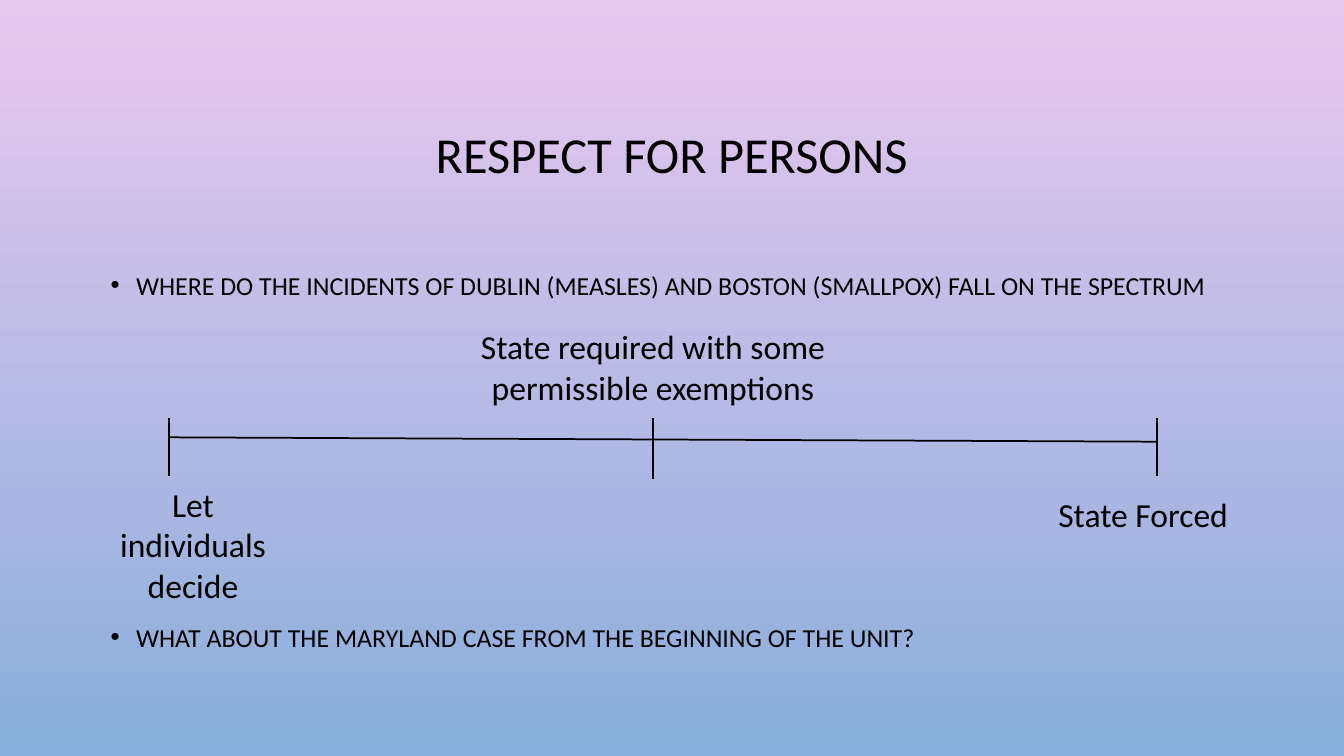
from dataclasses import dataclass

import pptx
import pptx.dml.color
import pptx.enum.shapes
import pptx.enum.text
import pptx.oxml
import pptx.oxml.ns
import pptx.util
from pptx.util import Cm

BLACK = pptx.dml.color.RGBColor(0x00, 0x00, 0x00)
PINK = pptx.dml.color.RGBColor(0xE9, 0xC8, 0xEF)
BLUE = pptx.dml.color.RGBColor(0x89, 0xAE, 0xDB)
FONT = "Calibri"
CENTER = pptx.enum.text.PP_ALIGN.CENTER
LEFT = pptx.enum.text.PP_ALIGN.LEFT
TOP = pptx.enum.text.MSO_ANCHOR.TOP
MIDDLE = pptx.enum.text.MSO_ANCHOR.MIDDLE


@dataclass
class TextBlock:
    """Text with its place in centimetres and its size in points."""
    lines: list[str]
    left: float
    top: float
    width: float
    height: float
    size: float = 24
    align: int = CENTER
    anchor: int = TOP
    line_spacing: float = 1.0


@dataclass
class Line:
    """A straight line between two points, in centimetres."""
    start_x: float
    start_y: float
    end_x: float
    end_y: float


TITLE = TextBlock(["RESPECT FOR PERSONS"], 2.54, 1.73, 28.78, 4.45,
                  size=36, anchor=MIDDLE, line_spacing=0.9)
QUESTIONS = TextBlock(
    ["WHERE DO THE INCIDENTS OF DUBLIN (MEASLES) AND BOSTON (SMALLPOX) FALL ON THE SPECTRUM",
     "WHAT ABOUT THE MARYLAND CASE FROM THE BEGINNING OF THE UNIT?"],
    2.54, 6.58, 28.78, 11.71, size=18.5, align=LEFT, line_spacing=1.1)
QUESTION_GAP = pptx.util.Pt(227)  # leaves room for the spectrum
LABELS = [
    TextBlock(["Let individuals decide"], 2.54, 12.07, 4.65, 3.33),
    TextBlock(["State required with some permissible exemptions"], 11.68, 8.1, 9.55, 2.31),
    TextBlock(["State Forced"], 26.42, 12.32, 5.46, 1.27, align=LEFT),
]

SPECTRUM_LEFT, SPECTRUM_MIDDLE, SPECTRUM_RIGHT = 4.26, 16.46, 29.15
TICK_TOP = 10.54
SPECTRUM = [
    Line(SPECTRUM_LEFT, 11.02, SPECTRUM_RIGHT, 11.13),
    Line(SPECTRUM_LEFT, TICK_TOP, SPECTRUM_LEFT, 11.99),
    Line(SPECTRUM_MIDDLE, TICK_TOP, SPECTRUM_MIDDLE, 12.06),
    Line(SPECTRUM_RIGHT, TICK_TOP, SPECTRUM_RIGHT, 11.99),
]


def add_text(page: pptx.slide.Slide, block: TextBlock) -> pptx.text.text.TextFrame:
    box = page.shapes.add_textbox(Cm(block.left), Cm(block.top),
                                  Cm(block.width), Cm(block.height))
    frame = box.text_frame
    frame.word_wrap = True
    frame.vertical_anchor = block.anchor
    frame.text = "\n".join(block.lines)
    for para in frame.paragraphs:
        para.alignment = block.align
        para.line_spacing = block.line_spacing
        for span in para.runs:
            span.font.name = FONT
            span.font.size = pptx.util.Pt(block.size)
            span.font.color.rgb = BLACK
    return frame


def add_bullet(para: pptx.text.text._Paragraph) -> None:
    properties = para._p.get_or_add_pPr()
    properties.set("marL", str(Cm(0.64)))
    properties.set("indent", str(-Cm(0.64)))
    namespace = pptx.oxml.ns.nsdecls("a")
    for markup in (f'<a:buFont {namespace} typeface="Arial"/>',
                   f'<a:buChar {namespace} char="•"/>'):
        properties.append(pptx.oxml.parse_xml(markup))


def add_line(page: pptx.slide.Slide, line: Line) -> None:
    connector = page.shapes.add_connector(
        pptx.enum.shapes.MSO_CONNECTOR.STRAIGHT,
        Cm(line.start_x), Cm(line.start_y), Cm(line.end_x), Cm(line.end_y))
    connector.line.color.rgb = BLACK
    connector.line.width = pptx.util.Pt(1.25)
    no_effects = f'<a:effectLst {pptx.oxml.ns.nsdecls("a")}/>'
    connector._element.spPr.append(pptx.oxml.parse_xml(no_effects))


def main() -> None:
    deck = pptx.Presentation()
    deck.slide_width, deck.slide_height = Cm(33.87), Cm(19.05)
    page = deck.slides.add_slide(deck.slide_layouts[6])

    # Background, pink at the top to blue at the bottom
    fill = page.background.fill
    fill.gradient()
    fill.gradient_angle = 270
    for stop, position, color in zip(fill.gradient_stops, (0, 1), (PINK, BLUE)):
        stop.position = position
        stop.color.rgb = color

    # Title and questions
    add_text(page, TITLE)
    questions = add_text(page, QUESTIONS)
    for para in questions.paragraphs:
        add_bullet(para)
    questions.paragraphs[1].space_before = QUESTION_GAP

    # Spectrum with its labels
    for line in SPECTRUM:
        add_line(page, line)
    for label in LABELS:
        add_text(page, label)

    deck.save("out.pptx")


if __name__ == "__main__":
    main()
